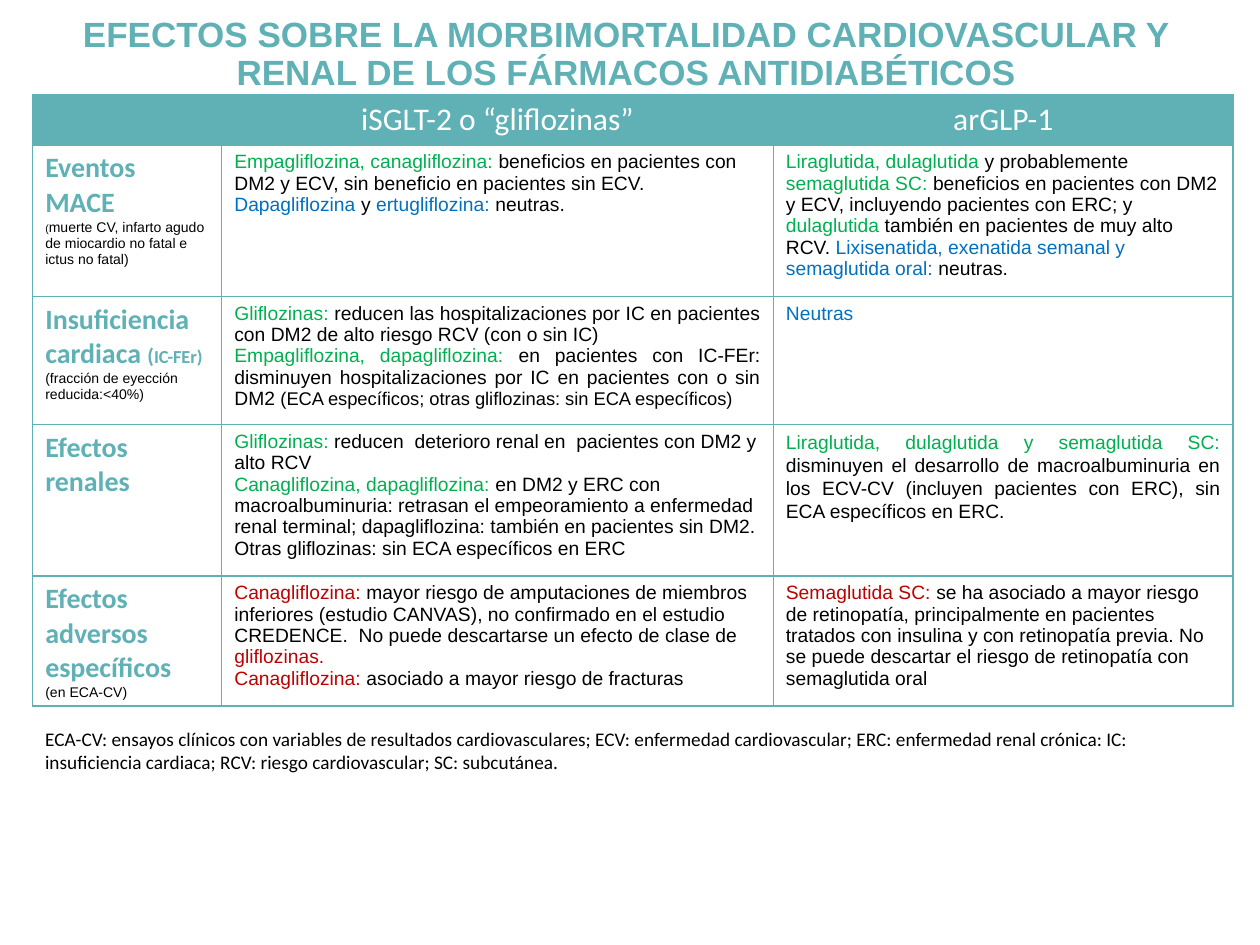
from pptx import Presentation
from pptx.dml.color import RGBColor
from pptx.enum.shapes import MSO_SHAPE as Shape
from pptx.enum.text import MSO_ANCHOR as Anchor, PP_ALIGN as Align
from pptx.oxml.ns import qn
from pptx.util import Pt
from lxml.etree import SubElement

TEAL, WHITE, BLACK = "5FB1B6", "FFFFFF", "000000"
GREEN, BLUE, RED = "00B050", "0070C0", "C00000"
COLUMN_WIDTHS = [108, 315.2, 262.8]
ROW_HEIGHTS = [25.2, 82.1, 59, 72.7, 72.7]
HEADING = dict(size=16, font="Calibri", color=TEAL, bold=True)
NOTE = dict(size=8)
JUSTIFIED = dict(alignment=Align.JUSTIFY)
LOOSE = dict(alignment=Align.JUSTIFY, line_spacing=1.07, space_after=Pt(8))

TITLE = "EFECTOS SOBRE LA MORBIMORTALIDAD CARDIOVASCULAR Y RENAL DE LOS FÁRMACOS ANTIDIABÉTICOS"
ABBREVIATIONS = (
    "ECA-CV: ensayos clínicos con variables de resultados cardiovasculares; "
    "ECV: enfermedad cardiovascular; ERC: enfermedad renal crónica: IC: insuficiencia cardiaca; "
    "RCV: riesgo cardiovascular; SC: subcutánea."
)
HEADERS = ["", "iSGLT-2 o “gliflozinas”", "arGLP-1"]


def green(text):
    return text, dict(color=GREEN)


def blue(text):
    return text, dict(color=BLUE)


def red(text):
    return text, dict(color=RED)


def plain(text, **style):
    return text, style


ROWS = [
    [
        [[("Eventos MACE", HEADING)],
         [plain("(", size=6),
          ("muerte CV, infarto agudo de miocardio no fatal e ictus no fatal)", NOTE)]],
        [[green("Empagliflozina, canagliflozina: "),
          plain("beneficios en pacientes con DM2 y ECV, sin beneficio en pacientes sin ECV.")],
         [blue("Dapagliflozina "), plain("y "), blue("ertugliflozina: "), plain("neutras.")]],
        [[green("Liraglutida, dulaglutida "), plain("y probablemente "), green("semaglutida SC: "),
          plain("beneficios en pacientes con DM2 y ECV, incluyendo pacientes con ERC; y "),
          green("dulaglutida "), plain("también en pacientes de muy alto RCV. "),
          blue("Lixisenatida, exenatida semanal y semaglutida oral: "), plain("neutras.")]],
    ],
    [
        [[("Insuficiencia cardiaca ", HEADING), ("(", HEADING | dict(size=12)),
          ("IC-FEr)", HEADING | dict(size=10.5)), (" ", HEADING),
          ("(fracción de eyección reducida:<40%)", NOTE)]],
        [[green("Gliflozinas: "),
          plain("reducen las hospitalizaciones por IC en pacientes con DM2 de alto riesgo RCV "
                "(con o sin IC)")],
         [green("Empagliflozina, dapagliflozina: "),
          plain("en pacientes con IC-FEr: disminuyen hospitalizaciones por IC en pacientes "
                "con o sin DM2 "),
          plain("(ECA específicos; otras gliflozinas: sin ECA específicos)", size=10.5)]],
        [[blue("Neutras")]],
    ],
    [
        [[("Efectos renales", HEADING)]],
        [[green("Gliflozinas: "),
          plain("reducen  deterioro renal en  pacientes con DM2 y alto RCV")],
         [green("Canagliflozina, dapagliflozina: "),
          plain("en DM2 y ERC con macroalbuminuria: retrasan el empeoramiento a enfermedad renal "
                "terminal; dapagliflozina: también en pacientes sin DM2. "
                "Otras gliflozinas: sin ECA específicos en ERC")]],
        [[green("Liraglutida, dulaglutida y semaglutida SC: "),
          plain("disminuyen el desarrollo de macroalbuminuria en los ECV-CV "
                "(incluyen pacientes con ERC), sin ECA específicos en ERC.")]],
    ],
    [
        [[("Efectos adversos específicos", HEADING)], [("(en ECA-CV)", NOTE)]],
        [[red("Canagliflozina: "),
          plain("mayor riesgo de amputaciones de miembros inferiores (estudio CANVAS), no "
                "confirmado en el estudio CREDENCE.  No puede descartarse un efecto de clase de "),
          red("gliflozinas.")],
         [red("Canagliflozina: "), plain("asociado a mayor riesgo de fracturas")]],
        [[red("Semaglutida SC: "),
          plain("se ha asociado a mayor riesgo de retinopatía, principalmente en pacientes "
                "tratados con insulina y con retinopatía previa. No se puede descartar el riesgo "
                "de retinopatía con semaglutida oral")]],
    ],
]
PARAGRAPH_FORMATS = {(2, 1): JUSTIFIED, (3, 2): LOOSE}


def rgb(color):
    return RGBColor.from_string(color)


def write_run(paragraph, text, size=11, font="Arial", color=BLACK, bold=False):
    run = paragraph.add_run()
    run.text = text
    run.font.size = Pt(size)
    run.font.name = font
    run.font.bold = bold
    run.font.color.rgb = rgb(color)


def write_paragraphs(text_frame, paragraphs, alignment=Align.LEFT, line_spacing=None,
                     space_after=None):
    for index, runs in enumerate(paragraphs):
        paragraph = text_frame.add_paragraph() if index else text_frame.paragraphs[0]
        paragraph.alignment = alignment
        paragraph.line_spacing = line_spacing
        paragraph.space_after = space_after
        for text, style in runs:
            write_run(paragraph, text, **style)


def set_borders(cell, color, width):
    properties = cell._tc.get_or_add_tcPr()
    for side in ("lnL", "lnR", "lnT", "lnB"):
        line = SubElement(properties, qn(f"a:{side}"), w=str(Pt(width)))
        fill = SubElement(line, qn("a:solidFill"))
        SubElement(fill, qn("a:srgbClr"), val=color)


def add_title(slide):
    box = slide.shapes.add_textbox(Pt(28.1), Pt(4.3), Pt(659.5), Pt(65.5))
    frame = box.text_frame
    frame.word_wrap = True
    frame.vertical_anchor = Anchor.BOTTOM
    frame.margin_bottom = Pt(16.5)
    write_paragraphs(frame, [[(TITLE, dict(size=20, color=TEAL, bold=True))]],
                     alignment=Align.CENTER, line_spacing=0.9)


def add_effects_table(slide):
    frame = slide.shapes.add_table(len(ROW_HEIGHTS), len(COLUMN_WIDTHS), Pt(18.7), Pt(54),
                                   Pt(sum(COLUMN_WIDTHS)), Pt(sum(ROW_HEIGHTS)))
    table = frame.table
    table.horz_banding = False
    for column, width in zip(table.columns, COLUMN_WIDTHS):
        column.width = Pt(width)
    for row, height in zip(table.rows, ROW_HEIGHTS):
        row.height = Pt(height)
    for cell in table.iter_cells():
        set_borders(cell, TEAL, 1)
        cell.fill.background()
    for column, text in enumerate(HEADERS):
        cell = table.cell(0, column)
        cell.fill.solid()
        cell.fill.fore_color.rgb = rgb(TEAL)
        if text:
            write_paragraphs(cell.text_frame,
                             [[(text, dict(size=18, font="Calibri", color=WHITE))]],
                             alignment=Align.CENTER)
    for row, cells in enumerate(ROWS, start=1):
        for column, paragraphs in enumerate(cells):
            write_paragraphs(table.cell(row, column).text_frame, paragraphs,
                             **PARAGRAPH_FORMATS.get((row, column), {}))


def add_abbreviations(slide):
    shape = slide.shapes.add_shape(Shape.RECTANGLE, Pt(18.7), Pt(411.8), Pt(673.9), Pt(33.8))
    shape.shadow.inherit = False
    shape.fill.solid()
    shape.fill.fore_color.rgb = rgb(WHITE)
    shape.line.fill.background()
    shape.text_frame.word_wrap = True
    shape.text_frame.vertical_anchor = Anchor.TOP
    write_paragraphs(shape.text_frame, [[(ABBREVIATIONS, dict(font="Calibri"))]])


def main():
    presentation = Presentation()
    presentation.slide_width, presentation.slide_height = Pt(720), Pt(540)
    slide = presentation.slides.add_slide(presentation.slide_layouts[6])
    add_title(slide)
    add_effects_table(slide)
    add_abbreviations(slide)
    presentation.save("out.pptx")


if __name__ == "__main__":
    main()
